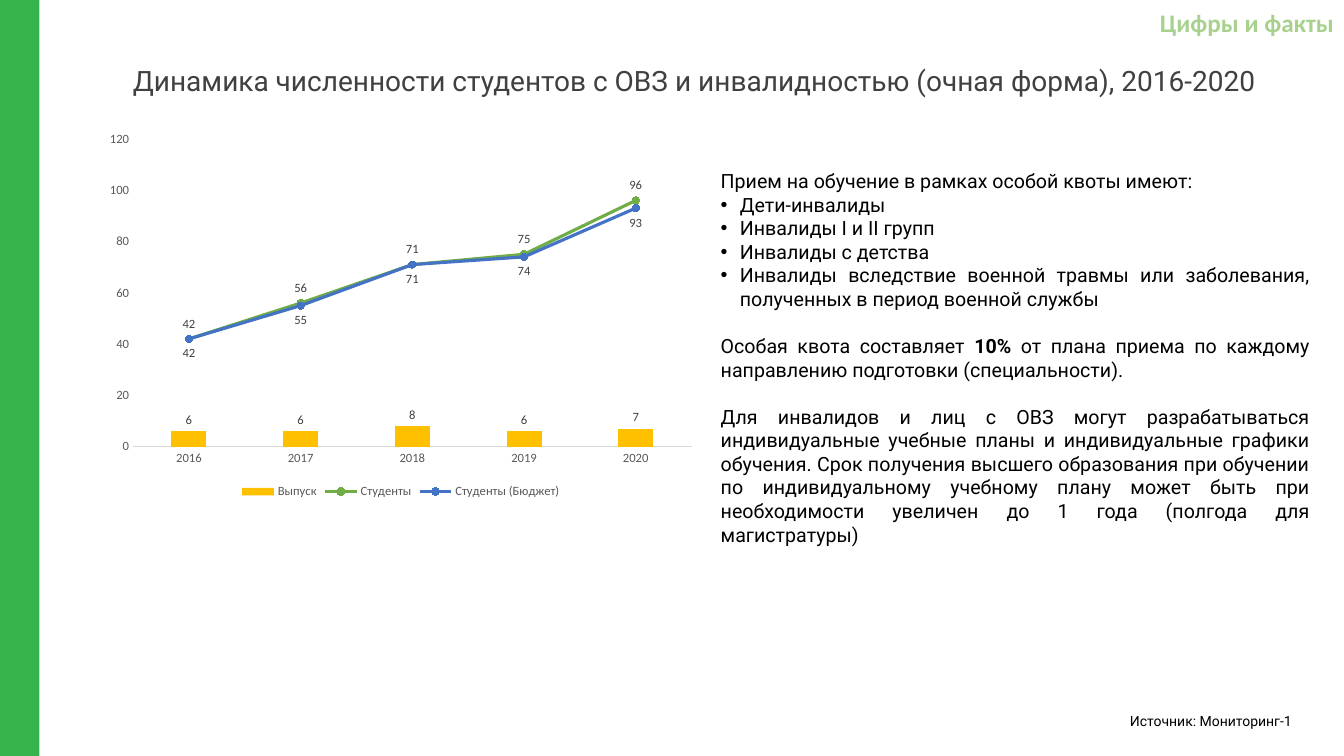
import dataclasses

import pptx
import pptx.chart.data
import pptx.dml.color
import pptx.enum.chart
import pptx.enum.shapes
import pptx.enum.text
import pptx.oxml
import pptx.oxml.ns
import pptx.util
from pptx.util import Inches

ALIGN = pptx.enum.text.PP_ALIGN
POS = pptx.enum.chart.XL_LABEL_POSITION


@dataclasses.dataclass(frozen=True)
class Theme:
    """Colours, fonts and type sizes of the slide."""
    band: str = "37B34B"
    section: str = "A9D18E"
    title: str = "404040"
    text: str = "000000"
    axis: str = "595959"
    axis_line: str = "D9D9D9"
    graduates: str = "FFC000"
    students: str = "70AD47"
    budget: str = "4472C4"
    font: str = "Roboto"
    chart_font: str = "Calibri"
    title_size: int = 20
    section_size: int = 18
    body_size: int = 14
    source_size: int = 10
    chart_size: int = 9
    blank_line: float = 16.9


T = Theme()
YEARS = ["2016", "2017", "2018", "2019", "2020"]
SERIES = [
    ("Выпуск", (6, 6, 8, 6, 7), T.graduates, POS.OUTSIDE_END),
    ("Студенты", (42, 56, 71, 75, 96), T.students, POS.ABOVE),
    ("Студенты (Бюджет)", (42, 55, 71, 74, 93), T.budget, POS.BELOW),
]
ELIGIBLE = [
    "Дети-инвалиды",
    "Инвалиды I и II групп",
    "Инвалиды с детства",
    "Инвалиды вследствие военной травмы или заболевания, "
    "полученных в период военной службы",
]
QUOTA = [
    ("Особая квота составляет ", False),
    ("10%", True),
    (" от плана приема по каждому направлению подготовки (специальности).", False),
]
PLANS = (
    "Для инвалидов и лиц с ОВЗ могут разрабатываться индивидуальные учебные планы "
    "и индивидуальные графики обучения. Срок получения высшего образования при "
    "обучении по индивидуальному учебному плану может быть при необходимости "
    "увеличен до 1 года (полгода для магистратуры)"
)


def rgb(value):
    """Return a colour object for a hex string."""
    return pptx.dml.color.RGBColor.from_string(value)


def style_font(font, size, color, name, bold=False):
    """Set the size, colour, typeface and weight of a font."""
    font.size = pptx.util.Pt(size)
    font.color.rgb = rgb(color)
    font.name = name
    font.bold = bold


def add_text(p, text, size=T.body_size, color=T.text, font=T.font, bold=False,
             align=ALIGN.JUSTIFY, line=None, before=0, bullet=False):
    """Append a formatted run to a paragraph and set the paragraph format."""
    p.alignment = align
    p.space_before = pptx.util.Pt(before)
    if line:
        p.line_spacing = line
    r = p.add_run()
    r.text = text
    style_font(r.font, size, color, font, bold)
    if bullet:
        pPr = p._p.get_or_add_pPr()
        pPr.set("marL", str(Inches(0.19)))
        pPr.set("indent", str(-Inches(0.19)))
        ns = pptx.oxml.ns.nsdecls("a")
        for xml in (f'<a:buFont {ns} typeface="Arial"/>', f'<a:buChar {ns} char="•"/>'):
            pPr.append(pptx.oxml.parse_xml(xml))


def add_frame(s, box):
    """Add a wrapping text box and return its text frame."""
    tf = s.shapes.add_textbox(*map(Inches, box)).text_frame
    tf.word_wrap = True
    return tf


def add_line_of_text(s, box, text, **fmt):
    """Add a text box holding one paragraph."""
    add_text(add_frame(s, box).paragraphs[0], text, **fmt)


def add_band(s, box):
    """Draw the coloured band at the slide edge."""
    sp = s.shapes.add_shape(pptx.enum.shapes.MSO_SHAPE.RECTANGLE, *map(Inches, box))
    sp.shadow.inherit = False
    sp.fill.solid()
    sp.fill.fore_color.rgb = rgb(T.band)
    sp.line.fill.background()


def add_body(s, box):
    """Write the quota rules into a justified text box."""
    tf = add_frame(s, box)
    add_text(tf.paragraphs[0], "Прием на обучение в рамках особой квоты имеют:")
    for item in ELIGIBLE:
        add_text(tf.add_paragraph(), item, bullet=True)
    p = tf.add_paragraph()
    for text, bold in QUOTA:
        add_text(p, text, bold=bold, before=T.blank_line)
    add_text(tf.add_paragraph(), PLANS, before=T.blank_line)


def move_to_lines(chart):
    """Move every series after the first into a line plot on the same axes."""
    qn = pptx.oxml.ns.qn
    bars = chart.plots[0]._element
    lines = pptx.oxml.parse_xml(
        f'<c:lineChart {pptx.oxml.ns.nsdecls("c")}><c:grouping val="standard"/>'
        '<c:varyColors val="0"/><c:marker val="1"/></c:lineChart>')
    marker = lines.find(qn("c:marker"))
    for ser in bars.findall(qn("c:ser"))[1:]:
        for invert in ser.findall(qn("c:invertIfNegative")):
            ser.remove(invert)
        marker.addprevious(ser)
    for ax in bars.findall(qn("c:axId")):
        lines.append(pptx.oxml.parse_xml(
            f'<c:axId {pptx.oxml.ns.nsdecls("c")} val="{ax.get("val")}"/>'))
    bars.addnext(lines)


def style_lines(series, color):
    """Format a line series and its round markers."""
    series.smooth = False
    series.format.line.color.rgb = rgb(color)
    series.format.line.width = pptx.util.Pt(2.25)
    series.marker.style = pptx.enum.chart.XL_MARKER_STYLE.CIRCLE
    series.marker.size = 5
    for fill in (series.marker.format.fill, series.marker.format.line.fill):
        fill.solid()
        fill.fore_color.rgb = rgb(color)


def add_trend_chart(s, box):
    """Add the columns of graduates with the lines of students."""
    data = pptx.chart.data.CategoryChartData()
    data.categories = YEARS
    for name, values, _, _ in SERIES:
        data.add_series(name, values)
    kind = pptx.enum.chart.XL_CHART_TYPE.COLUMN_CLUSTERED
    chart = s.shapes.add_chart(kind, *map(Inches, box), data).chart
    chart.has_title = False
    style_font(chart.font, T.chart_size, T.axis, T.chart_font)
    move_to_lines(chart)
    bars, lines = chart.plots
    bars.gap_width = 219
    bars.vary_by_categories = False
    for series, (_, _, color, pos) in zip([*bars.series, *lines.series], SERIES):
        labels = series.data_labels
        labels.show_value = True
        labels.position = pos
        style_font(labels.font, T.chart_size, T.title, T.chart_font)
        if pos == POS.OUTSIDE_END:
            series.format.fill.solid()
            series.format.fill.fore_color.rgb = rgb(color)
        else:
            style_lines(series, color)
    for axis in (chart.category_axis, chart.value_axis):
        axis.has_major_gridlines = False
        axis.major_tick_mark = pptx.enum.chart.XL_TICK_MARK.NONE
        style_font(axis.tick_labels.font, T.chart_size, T.axis, T.chart_font)
    chart.category_axis.format.line.color.rgb = rgb(T.axis_line)
    chart.category_axis.format.line.width = pptx.util.Pt(0.75)
    chart.value_axis.format.line.fill.background()
    chart.value_axis.maximum_scale = 120
    chart.has_legend = True
    chart.legend.position = pptx.enum.chart.XL_LEGEND_POSITION.BOTTOM
    chart.legend.include_in_layout = False
    style_font(chart.legend.font, T.chart_size, T.axis, T.chart_font)


def main():
    """Build the slide and save it."""
    prs = pptx.Presentation()
    prs.slide_width, prs.slide_height = Inches(13.33), Inches(7.5)
    s = prs.slides.add_slide(prs.slide_layouts[6])
    add_band(s, (0, 0, 0.39, 7.5))
    add_line_of_text(
        s, (1.14, 0.62, 11.5, 1.45),
        "Динамика численности студентов с ОВЗ и инвалидностью (очная форма), 2016-2020",
        size=T.title_size, color=T.title, align=ALIGN.CENTER, line=0.9)
    add_line_of_text(s, (10.76, 0.02, 2.57, 0.4), "Цифры и факты", size=T.section_size,
                     color=T.section, font=T.chart_font, bold=True, align=ALIGN.RIGHT)
    add_line_of_text(s, (10.25, 7.02, 2.66, 0.27), "Источник: Мониторинг-1",
                     size=T.source_size, align=ALIGN.RIGHT)
    add_trend_chart(s, (0.97, 1.23, 6.01, 3.76))
    add_body(s, (7.05, 1.63, 6.04, 3.87))
    prs.save("out.pptx")


if __name__ == "__main__":
    main()
